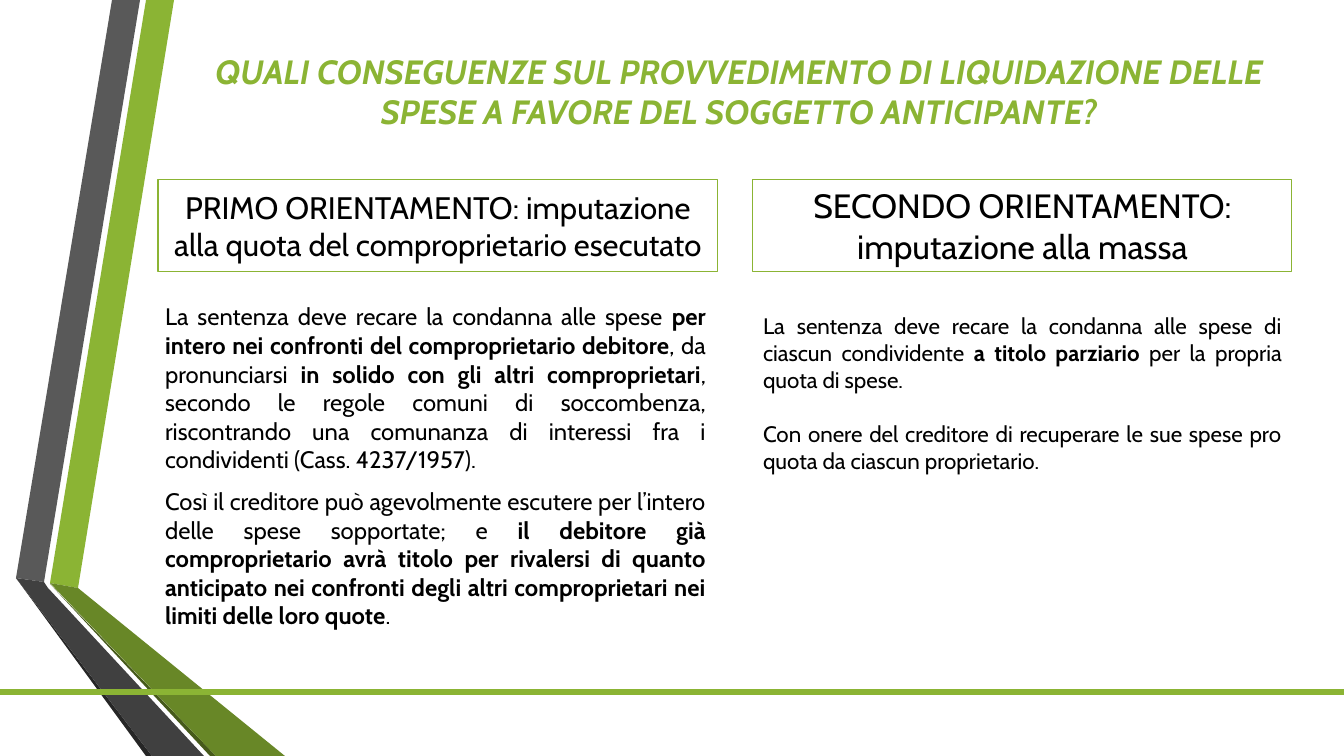
from dataclasses import dataclass

from lxml import etree
from pptx import Presentation
from pptx.dml.color import RGBColor
from pptx.enum.shapes import MSO_SHAPE
from pptx.enum.text import MSO_ANCHOR, MSO_AUTO_SIZE, PP_ALIGN
from pptx.oxml.ns import qn
from pptx.util import Emu, Pt

EMU_PER_PX = 914400 / 100.8
SLIDE_WIDTH, SLIDE_HEIGHT = 1344, 756
COMPARISON_LAYOUT = 4
CENTER, JUSTIFY = PP_ALIGN.CENTER, PP_ALIGN.JUSTIFY
TOP, MIDDLE = MSO_ANCHOR.TOP, MSO_ANCHOR.MIDDLE
RECTANGLE = MSO_SHAPE.RECTANGLE
NO_AUTOFIT = MSO_AUTO_SIZE.NONE


@dataclass(frozen=True)
class Theme:
    font: str = "Cabin"
    text: str = "000000"
    green: str = "8BB434"
    green_dark: str = "688727"
    green_edge: str = "465A1A"
    gray: str = "595959"
    gray_dark: str = "404040"
    gray_edge: str = "262626"
    title_size: float = 24
    first_heading_size: float = 22.2
    second_heading_size: float = 24
    first_body_size: float = 17
    second_body_size: float = 16


THEME = Theme()

# Ribbon pieces: colour and corner points in px
RIBBON = [
    (THEME.green, [(50, 583), (78, 588), (174, 0), (146, 0)]),
    (THEME.gray, [(140, 0), (112, 0), (16, 578), (44, 582)]),
    (THEME.gray_edge, [(16, 578), (146, 756), (152, 756)]),
    (THEME.green_edge, [(50, 584), (210, 756), (216, 756)]),
    (THEME.green_dark, [(50, 583), (216, 756), (285, 756), (78, 588)]),
    (THEME.gray_dark, [(204, 756), (48, 588), (44, 582), (16, 578), (152, 756)]),
]

# Paragraphs are lists of (text, bold) runs
TITLE = [[("QUALI CONSEGUENZE SUL PROVVEDIMENTO DI LIQUIDAZIONE DELLE "
           "SPESE A FAVORE DEL SOGGETTO ANTICIPANTE?", True)]]
FIRST_HEADING = [[("PRIMO ORIENTAMENTO: imputazione alla quota del "
                   "comproprietario esecutato", False)]]
SECOND_HEADING = [[("SECONDO ORIENTAMENTO: imputazione alla massa", False)]]
FIRST_BODY = [
    [("La sentenza deve recare la condanna alle spese ", False),
     ("per intero nei confronti del comproprietario debitore", True),
     (", da pronunciarsi ", False),
     ("in solido con gli altri comproprietari", True),
     (", secondo le regole comuni di soccombenza, riscontrando una comunanza "
      "di interessi fra i condividenti (Cass. 4237/1957).", False)],
    [("Così il creditore può agevolmente escutere per l’intero delle spese "
      "sopportate; e ", False),
     ("il debitore già comproprietario avrà titolo per rivalersi di quanto "
      "anticipato nei confronti degli altri comproprietari nei limiti delle "
      "loro quote", True),
     (".", False)],
]
SECOND_BODY = [
    [("La sentenza deve recare la condanna alle spese di ciascun condividente ",
      False),
     ("a titolo parziario ", True),
     ("per la propria quota di spese.", False)],
    [("Con onere del creditore di recuperare le sue spese pro quota da ciascun "
      "proprietario.", False)],
]


def px(length):
    return Emu(round(length * EMU_PER_PX))


def paint(shape, color):
    shape.fill.solid()
    shape.fill.fore_color.rgb = RGBColor.from_string(color)
    shape.line.fill.background()
    shape.shadow.inherit = False


def place(shape, box):
    shape.left, shape.top, shape.width, shape.height = map(px, box)


def write(shape, paragraphs, *, size, color=THEME.text, align=JUSTIFY,
          anchor=TOP, italic=False, gap=0):
    frame = shape.text_frame
    frame.word_wrap = True
    frame.auto_size = NO_AUTOFIT
    frame.vertical_anchor = anchor
    for index, runs in enumerate(paragraphs):
        paragraph = frame.add_paragraph() if index else frame.paragraphs[0]
        paragraph.alignment = align
        paragraph.line_spacing = 1.0
        paragraph.space_before = Pt(gap if index else 0)
        paragraph.space_after = Pt(0)
        # No bullet and no hanging indent
        properties = paragraph._p.get_or_add_pPr()
        properties.set("marL", "0")
        properties.set("indent", "0")
        etree.SubElement(properties, qn("a:buNone"))
        for text, bold in runs:
            run = paragraph.add_run()
            run.text = text
            run.font.name = THEME.font
            run.font.size = Pt(size)
            run.font.bold = bold
            run.font.italic = italic
            run.font.color.rgb = RGBColor.from_string(color)


def draw_background(slide):
    # Folded ribbon
    for color, points in RIBBON:
        builder = slide.shapes.build_freeform(*points[0], scale=EMU_PER_PX)
        builder.add_line_segments(points[1:], close=True)
        paint(builder.convert_to_shape(), color)
    # Footer rule
    rule = slide.shapes.add_shape(
        RECTANGLE, *map(px, (0, 689, SLIDE_WIDTH, 6)))
    paint(rule, THEME.green)


def fill_title(shape, box):
    place(shape, box)
    write(shape, TITLE, size=THEME.title_size, color=THEME.green,
          align=CENTER, italic=True)


def fill_heading(shape, box, paragraphs, size):
    place(shape, box)
    shape.line.color.rgb = RGBColor.from_string(THEME.green)
    shape.line.width = Pt(0.75)
    write(shape, paragraphs, size=size, align=CENTER, anchor=MIDDLE)


def fill_body(shape, box, paragraphs, size, gap):
    place(shape, box)
    write(shape, paragraphs, size=size, gap=gap)


def build_comparison(presentation):
    layout = presentation.slide_layouts[COMPARISON_LAYOUT]
    slide = presentation.slides.add_slide(layout)
    draw_background(slide)
    holders = slide.placeholders
    fill_title(slide.shapes.title, (174, 46, 1130, 92))
    # First view
    fill_heading(holders[1], (158, 179, 560, 93), FIRST_HEADING,
                 THEME.first_heading_size)
    fill_body(holders[2], (155, 297, 561, 349), FIRST_BODY,
              THEME.first_body_size, gap=9.4)
    # Second view
    fill_heading(holders[3], (753, 179, 539, 93), SECOND_HEADING,
                 THEME.second_heading_size)
    fill_body(holders[4], (753, 307, 539, 173), SECOND_BODY,
              THEME.second_body_size, gap=19.4)


def main():
    presentation = Presentation()
    presentation.slide_width = px(SLIDE_WIDTH)
    presentation.slide_height = px(SLIDE_HEIGHT)
    build_comparison(presentation)
    presentation.save("out.pptx")


if __name__ == "__main__":
    main()
